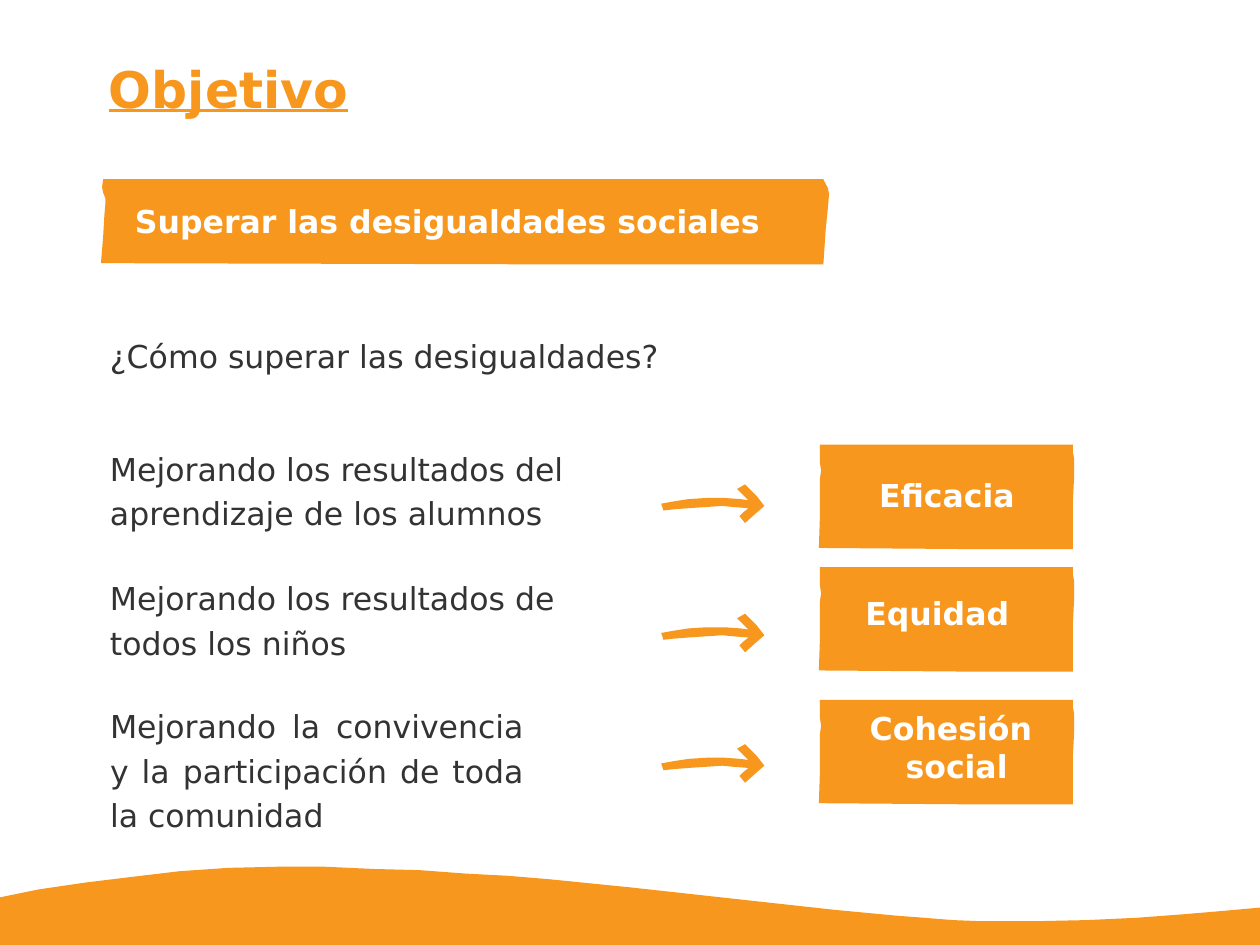
from dataclasses import dataclass

from pptx import Presentation
from pptx.dml.color import RGBColor
from pptx.enum.text import PP_ALIGN
from pptx.shapes.autoshape import Shape
from pptx.slide import Slide
from pptx.util import Inches, Length, Pt

Points = list[tuple[float, float]]

COLORS = {"orange": "F8971D", "gray": "333333", "white": "FFFFFF"}
FONT = "DejaVu Sans"

WAVE: Points = [
    (0, 7.91), (0.34, 7.84), (0.75, 7.78), (1.16, 7.73), (1.58, 7.68), (2.01, 7.65),
    (2.44, 7.64), (2.87, 7.64), (3.3, 7.66), (3.7, 7.67), (4.1, 7.7), (4.48, 7.72),
    (4.84, 7.75), (5.54, 7.82), (7.36, 8.02), (7.89, 8.07), (8.15, 8.09), (8.4, 8.11),
    (8.65, 8.12), (8.89, 8.12), (9.13, 8.12), (9.59, 8.11), (10.02, 8.09), (10.42, 8.06),
    (10.78, 8.03), (11.11, 8), (11.11, 8.33), (0, 8.33),
]
BANNER: Points = [
    (0.02, 0), (0.01, 0.07), (0.02, 0.12), (0.04, 0.17), (0.04, 0.21), (0.03, 0.32),
    (0.02, 0.5), (0, 0.74), (3.82, 0.75), (6.37, 0.75), (6.39, 0.45), (6.41, 0.25),
    (6.42, 0.13), (6.41, 0.08), (6.37, 0),
]
TAG: Points = [
    (0.01, 0), (0.01, 0.16), (0.02, 0.23), (0.01, 0.3), (0.01, 0.62), (0, 0.91),
    (1.34, 0.92), (2.24, 0.92), (2.24, 0.5), (2.25, 0.3), (2.25, 0.12), (2.24, 0.06),
    (2.24, 0),
]
ARROW: Points = [
    (0, 0.17), (0.11, 0.15), (0.24, 0.13), (0.4, 0.12), (0.56, 0.12), (0.7, 0.13),
    (0.77, 0.14), (0.75, 0.12), (0.67, 0.04), (0.74, 0), (0.84, 0.1), (0.91, 0.19),
    (0.83, 0.26), (0.74, 0.34), (0.69, 0.28), (0.72, 0.25), (0.77, 0.21), (0.64, 0.2),
    (0.54, 0.19), (0.39, 0.2), (0.24, 0.21), (0.11, 0.22), (0.02, 0.23),
]


@dataclass
class Label:
    text: str
    left: float
    top: float
    width: float
    height: float
    color: str = "gray"
    size: int = 20
    bold: bool = False
    underline: bool = False
    align: PP_ALIGN = PP_ALIGN.LEFT
    spacing: float | Length | None = None
    hanging: float = 0


@dataclass
class Goal:
    action: Label
    arrow_top: float
    tag_top: float
    result: Label


TITLE = Label("Objetivo", 0.96, 0.43, 9.2, 0.88, "orange", 32, True, True, spacing=Pt(44.1))
AIM = Label("Superar las desigualdades sociales", 1.19, 1.78, 6.03, 0.34, "white", bold=True)
QUESTION = Label("¿Cómo superar las desigualdades?", 0.97, 2.97, 5.5, 0.34)
GOALS = [
    Goal(
        Label("Mejorando los resultados del aprendizaje de los alumnos",
              0.97, 3.91, 4.03, 0.78, spacing=1.17),
        4.27, 3.92,
        Label("Eficacia", 7.75, 4.2, 1.2, 0.34, "white", bold=True, align=PP_ALIGN.CENTER),
    ),
    Goal(
        Label("Mejorando los resultados de todos los niños",
              0.97, 5.05, 4.03, 0.78, spacing=1.17),
        5.41, 5,
        Label("Equidad", 7.63, 5.24, 1.45, 0.34, "white", bold=True),
    ),
    Goal(
        Label("Mejorando la convivencia y la participación de toda la comunidad",
              0.97, 6.18, 3.65, 1.17, align=PP_ALIGN.JUSTIFY, spacing=1.17),
        6.56, 6.17,
        Label("Cohesión social", 7.47, 6.25, 1.83, 0.67, "white", bold=True,
              align=PP_ALIGN.CENTER, hanging=0.1),
    ),
]


def draw_outline(page: Slide, points: Points, left: float = 0, top: float = 0) -> Shape:
    corners = [(Inches(left + x), Inches(top + y)) for x, y in points]
    builder = page.shapes.build_freeform(*corners[0])
    builder.add_line_segments(corners[1:], close=True)
    shape = builder.convert_to_shape()
    shape.shadow.inherit = False
    shape.fill.solid()
    shape.fill.fore_color.rgb = RGBColor.from_string(COLORS["orange"])
    shape.line.fill.background()
    return shape


def write_label(page: Slide, label: Label) -> None:
    box = page.shapes.add_textbox(
        Inches(label.left), Inches(label.top), Inches(label.width), Inches(label.height)
    )
    frame = box.text_frame
    frame.word_wrap = True
    frame.margin_left = frame.margin_right = frame.margin_top = frame.margin_bottom = 0
    paragraph = frame.paragraphs[0]
    paragraph.text = label.text
    paragraph.alignment = label.align
    paragraph.line_spacing = label.spacing
    if label.hanging:
        properties = paragraph._p.get_or_add_pPr()
        properties.set("marL", str(Inches(label.hanging)))
        properties.set("indent", str(-Inches(label.hanging)))
    font = paragraph.font
    font.name = FONT
    font.size = Pt(label.size)
    font.bold = label.bold
    font.underline = label.underline
    font.color.rgb = RGBColor.from_string(COLORS[label.color])


def main() -> None:
    deck = Presentation()
    deck.slide_width, deck.slide_height = Inches(11.11), Inches(8.33)
    page = deck.slides.add_slide(deck.slide_layouts[6])

    draw_outline(page, WAVE)
    write_label(page, TITLE)
    draw_outline(page, BANNER, 0.89, 1.58)
    write_label(page, AIM)
    write_label(page, QUESTION)
    for goal in GOALS:
        write_label(page, goal.action)
        draw_outline(page, ARROW, 5.83, goal.arrow_top)
        draw_outline(page, TAG, 7.22, goal.tag_top)
        write_label(page, goal.result)

    deck.save("out.pptx")


if __name__ == "__main__":
    main()
